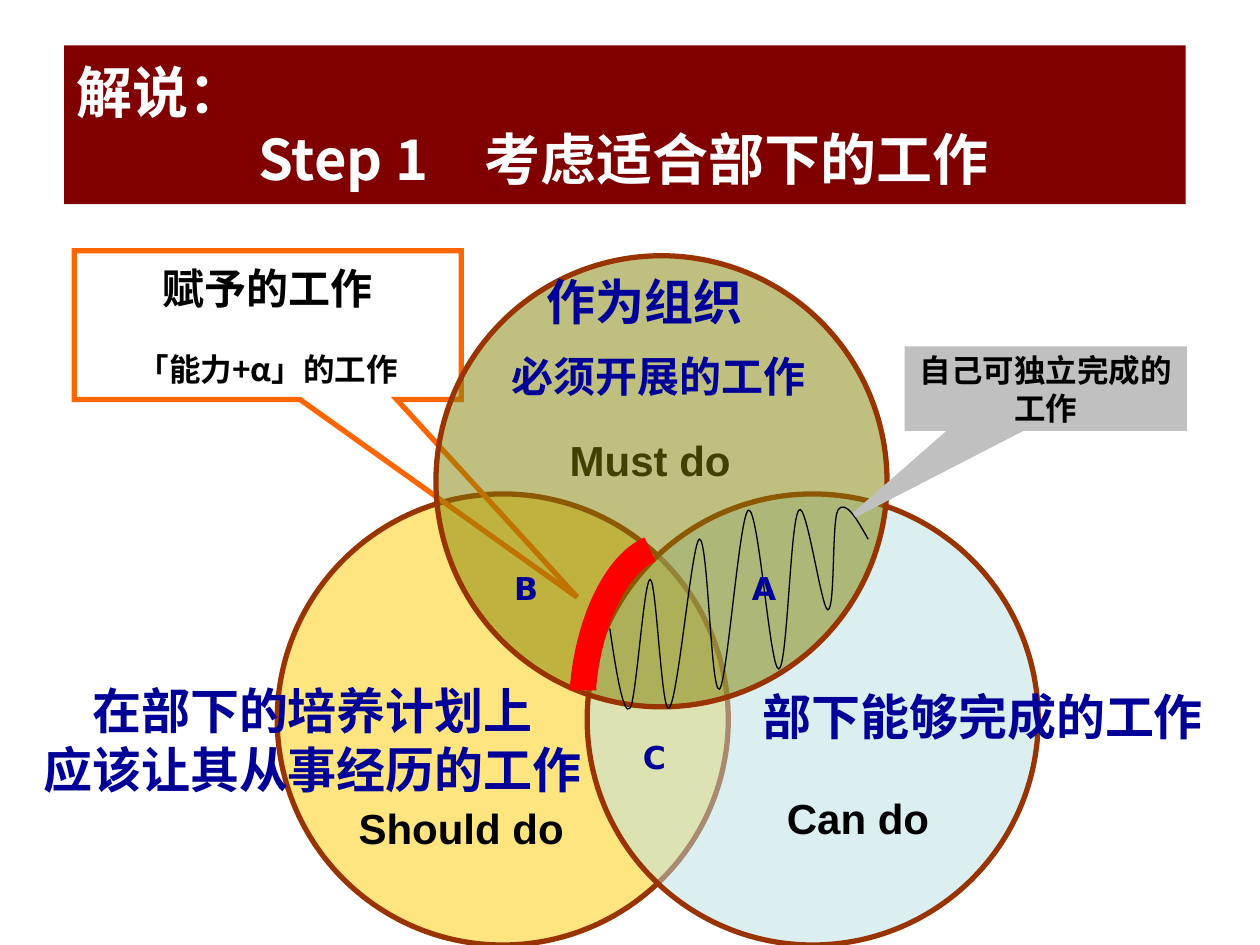
from lxml.etree import SubElement
from pptx import Presentation
from pptx.dml.color import RGBColor
from pptx.enum.shapes import MSO_SHAPE
from pptx.enum.text import MSO_ANCHOR, MSO_AUTO_SIZE, PP_ALIGN
from pptx.oxml.ns import qn
from pptx.util import Inches, Pt

CELL = Inches(0.1)
COLUMNS, ROWS = 100, 75
CIRCLE_SIZE = 35.8

CJK_FONT = "Noto Sans CJK SC"
LABEL_FONT = "DejaVu Sans"
ENGLISH_FONT = "Arial"

WHITE = RGBColor(0xFF, 0xFF, 0xFF)
BLACK = RGBColor(0x00, 0x00, 0x00)
NAVY = RGBColor(0x00, 0x00, 0x99)
MAROON = RGBColor(0x80, 0x00, 0x00)
BROWN = RGBColor(0x99, 0x33, 0x00)
GOLD = RGBColor(0xFF, 0xCC, 0x00)
PALE_BLUE = RGBColor(0xBB, 0xE0, 0xE3)
OLIVE = RGBColor(0x80, 0x80, 0x00)
ORANGE = RGBColor(0xFF, 0x66, 0x00)
GRAY = RGBColor(0xC0, 0xC0, 0xC0)
RED = RGBColor(0xFF, 0x00, 0x00)

BAND_CURVE = [(51.6, 43.6), (49, 44.7), (46.8, 49.1), (46.3, 54.3),
              (46.3, 54.5), (46.3, 54.6), (46.3, 54.8)]
WAVE_CURVE = [
    (48.4, 49.9), (48.9, 53.4), (49.5, 56.9), (50, 56.2),
    (50.5, 55.6), (51.1, 46), (51.6, 46),
    (52.1, 46), (52.5, 56.8), (53.1, 56.2),
    (53.8, 55.7), (54.9, 43.1), (55.5, 42.8),
    (56.2, 42.6), (56.4, 55.1), (57.1, 54.7),
    (57.7, 54.3), (58.7, 40.7), (59.4, 40.5),
    (60.2, 40.2), (61.1, 53.1), (61.8, 53.1),
    (62.5, 53.1), (62.7, 41.3), (63.4, 40.5),
    (64, 39.7), (65.2, 48.4), (65.7, 48.4),
    (66.3, 48.4), (66, 41.4), (66.5, 40.5),
    (67.1, 39.6), (68, 41.2), (68.9, 42.8),
]


def grid(*cells):
    return [round(cell * CELL) for cell in cells]


def style_line(shape, color, width):
    shape.shadow.inherit = False
    shape.line.color.rgb = color
    shape.line.width = Pt(width)
    line = shape._element.spPr.find(qn("a:ln"))
    SubElement(line, qn("a:miter")).set("lim", "800000")


def write_lines(frame, lines, font, color, align=PP_ALIGN.CENTER, gap=0):
    for index, (text, size) in enumerate(lines):
        paragraph = frame.paragraphs[0] if index == 0 else frame.add_paragraph()
        paragraph.alignment = align
        paragraph.space_before = Pt(gap if index else 0)
        run = paragraph.add_run()
        run.text = text
        run.font.size = Pt(size)
        run.font.bold = True
        run.font.name = font
        run.font.color.rgb = color
        SubElement(run._r.get_or_add_rPr(), qn("a:ea")).set("typeface", font)


def format_title(slide):
    title = slide.shapes.title
    title.left, title.top, title.width, title.height = grid(5.1, 3.6, 89, 12.6)
    title.fill.solid()
    title.fill.fore_color.rgb = MAROON
    frame = title.text_frame
    frame.auto_size = MSO_AUTO_SIZE.NONE
    frame.vertical_anchor = MSO_ANCHOR.MIDDLE
    lines = [("解说：", 32), ("Step 1　考虑适合部下的工作", 32)]
    write_lines(frame, lines, CJK_FONT, WHITE, PP_ALIGN.LEFT)
    properties = frame.paragraphs[1]._p.get_or_add_pPr()
    properties.set("marL", str(grid(14.4)[0]))
    properties.set("indent", "0")


def add_circle(slide, column, row, color):
    circle = slide.shapes.add_shape(
        MSO_SHAPE.OVAL, *grid(column, row, CIRCLE_SIZE, CIRCLE_SIZE))
    circle.fill.solid()
    circle.fill.fore_color.rgb = color
    fill_color = circle._element.spPr.find(qn("a:solidFill"))[0]
    SubElement(fill_color, qn("a:alpha")).set("val", "50000")
    style_line(circle, BROWN, 3)


def add_callout(slide, cells, tip, lines, line_color, fill_color=None, gap=0):
    callout = slide.shapes.add_shape(
        MSO_SHAPE.RECTANGULAR_CALLOUT, *grid(*cells))
    callout.adjustments[0], callout.adjustments[1] = tip
    if fill_color is None:
        callout.fill.background()
    else:
        callout.fill.solid()
        callout.fill.fore_color.rgb = fill_color
    style_line(callout, line_color, 3)
    frame = callout.text_frame
    frame.word_wrap = True
    frame.margin_left = frame.margin_right = Inches(0.05)
    frame.vertical_anchor = MSO_ANCHOR.MIDDLE
    write_lines(frame, lines, CJK_FONT, BLACK, gap=gap)


def add_text(slide, cells, lines, font, color, anchor=MSO_ANCHOR.MIDDLE):
    frame = slide.shapes.add_textbox(*grid(*cells)).text_frame
    frame.word_wrap = True
    frame.vertical_anchor = anchor
    write_lines(frame, lines, font, color)


def add_curve(slide, controls, color, width):
    points = [grid(*point) for point in controls]
    builder = slide.shapes.build_freeform(*points[0])
    builder.add_line_segments(points[1:], close=False)
    curve = builder.convert_to_shape()
    outline = next(curve._element.iter(qn("a:pathLst")))[0]
    segments = outline.findall(qn("a:lnTo"))
    for start in range(0, len(segments), 3):
        bezier = SubElement(outline, qn("a:cubicBezTo"))
        for segment in segments[start:start + 3]:
            bezier.append(segment[0])
            outline.remove(segment)
    curve.fill.background()
    style_line(curve, color, width)


def main():
    presentation = Presentation()
    presentation.slide_width, presentation.slide_height = grid(COLUMNS, ROWS)
    slide = presentation.slides.add_slide(presentation.slide_layouts[5])
    format_title(slide)

    add_circle(slide, 22, 39.2, GOLD)
    add_circle(slide, 46.6, 39.2, PALE_BLUE)
    add_text(slide, (1.8, 53.4, 46, 10.5),
             [("在部下的培养计划上", 28), ("应该让其从事经历的工作", 28)],
             CJK_FONT, NAVY)
    add_text(slide, (59, 53.7, 38, 6.3),
             [("部下能够完成的工作", 28)], CJK_FONT, NAVY)
    add_callout(slide, (5.9, 19.9, 30.7, 11.8), (0.8, 1.83),
                [("赋予的工作", 24), ("「能力+α」的工作", 18)], ORANGE, gap=21)
    for text, column, row in [("Should do", 24, 63.2), ("Can do", 55.5, 62.4),
                              ("Must do", 39, 34)]:
        add_text(slide, (column, row, 25.2, 5), [(text, 24)],
                 ENGLISH_FONT, BLACK, MSO_ANCHOR.TOP)

    add_circle(slide, 34.6, 20.3, OLIVE)
    add_curve(slide, BAND_CURVE, RED, 15)
    add_curve(slide, WAVE_CURVE, BLACK, 0.75)
    add_callout(slide, (72, 27.7, 22, 6.3), (-0.69, 1.59),
                [("自己可独立完成的工作", 18)], GRAY, GRAY)
    add_text(slide, (41.3, 20.7, 19.7, 6.3), [("作为组织", 28)], CJK_FONT, NAVY)
    add_text(slide, (34.2, 27.3, 36.2, 5), [("必须开展的工作", 24)],
             CJK_FONT, NAVY, MSO_ANCHOR.TOP)
    for letter, column, row in [("A", 56.3, 43.5), ("B", 37.4, 43.5),
                                ("C", 47.6, 56.9)]:
        add_text(slide, (column, row, 8.7, 6.3), [(letter, 18)], LABEL_FONT, NAVY)

    presentation.save("out.pptx")


if __name__ == "__main__":
    main()
